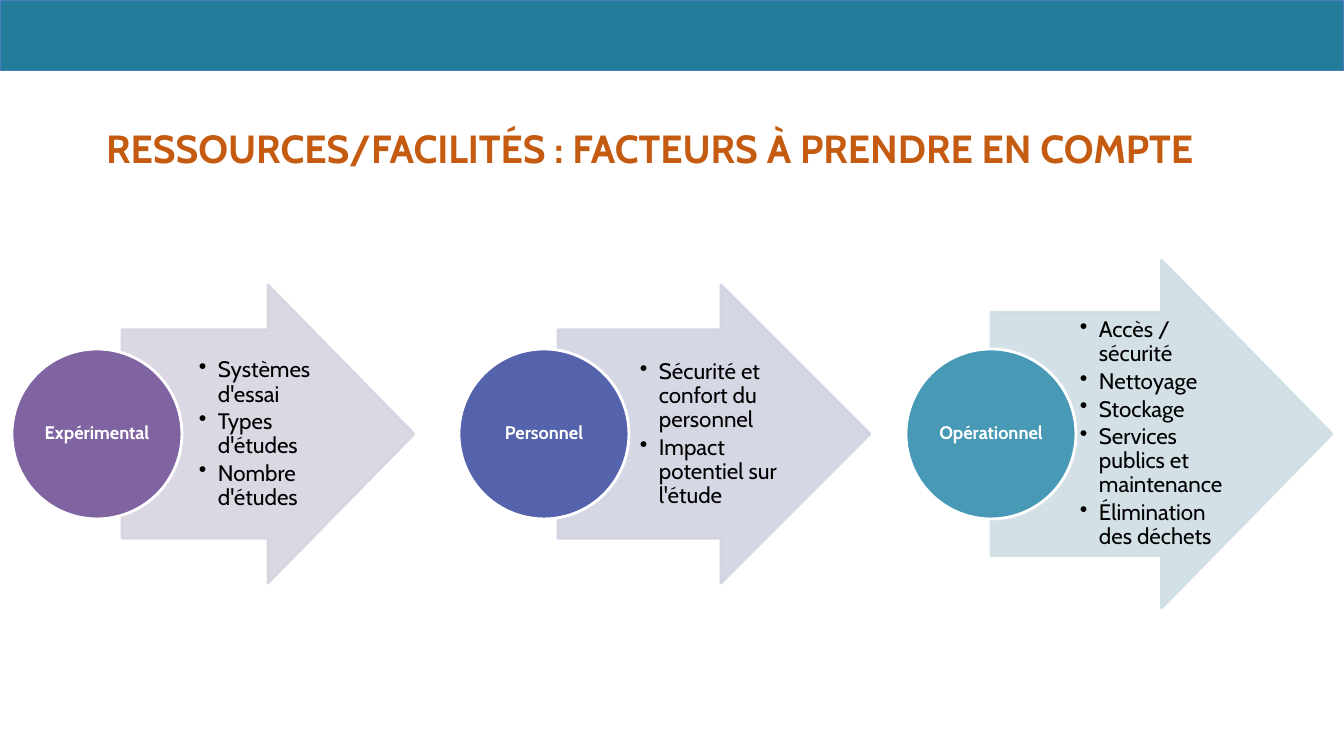
from lxml import etree
from pptx import Presentation
from pptx.dml.color import RGBColor
from pptx.enum.shapes import MSO_SHAPE
from pptx.enum.text import MSO_ANCHOR, PP_ALIGN
from pptx.oxml.ns import qn
from pptx.util import Emu, Pt

RECT, ARROW, OVAL = MSO_SHAPE.RECTANGLE, MSO_SHAPE.RIGHT_ARROW, MSO_SHAPE.OVAL
LEFT, CENTER = PP_ALIGN.LEFT, PP_ALIGN.CENTER
TOP, MIDDLE = MSO_ANCHOR.TOP, MSO_ANCHOR.MIDDLE

WHITE = RGBColor(0xFF, 0xFF, 0xFF)
BLACK = RGBColor(0x00, 0x00, 0x00)
ORANGE = RGBColor(0xC5, 0x5A, 0x11)
TEAL = RGBColor(0x23, 0x7C, 0x9A)
BAND_LINE = RGBColor(0x4B, 0x7E, 0xBC)
PURPLE, PALE_PURPLE = RGBColor(0x80, 0x64, 0xA2), RGBColor(0xD8, 0xD3, 0xE0)
INDIGO, PALE_INDIGO = RGBColor(0x55, 0x62, 0xAC), RGBColor(0xD1, 0xD3, 0xE2)
CYAN, PALE_CYAN = RGBColor(0x47, 0x99, 0xB5), RGBColor(0xCF, 0xDE, 0xE5)

FONT = "Cabin"
PX = 914400 / 100.8

prs = Presentation()
prs.slide_width, prs.slide_height = Emu(round(1344 * PX)), Emu(round(756 * PX))
s = prs.slides.add_slide(prs.slide_layouts[6])


def add_box(kind, x, y, w, h, fill=None, line=None, line_width=2, alpha=None):
    """Add a preset shape, or a text box when kind is None; lengths in px."""
    box = [Emu(round(v * PX)) for v in (x, y, w, h)]
    if kind is None:
        return s.shapes.add_textbox(*box)
    sp = s.shapes.add_shape(kind, *box)
    sp.shadow.inherit = False
    sp.fill.solid()
    sp.fill.fore_color.rgb = fill
    sp.line.color.rgb = line
    sp.line.width = Pt(line_width)
    if alpha:
        for color in sp._element.spPr.iter(qn("a:srgbClr")):
            etree.SubElement(color, qn("a:alpha"), val=str(alpha * 1000))
    return sp


def write(sp, lines, size, color, bold=False, align=CENTER, anchor=MIDDLE,
          insets=(1, 1, 1, 1), spacing=0.9, after=0, bullet=False):
    tf = sp.text_frame
    tf.word_wrap = True
    tf.vertical_anchor = anchor
    tf.margin_left, tf.margin_top, tf.margin_right, tf.margin_bottom = [
        Emu(round(v * PX)) for v in insets]
    for i, text in enumerate(lines):
        p = tf.paragraphs[0] if i == 0 else tf.add_paragraph()
        p.alignment = align
        p.line_spacing = spacing
        p.space_after = Pt(after)
        if bullet:
            pPr = p._p.get_or_add_pPr()
            indent = round(19 * PX)
            pPr.set("marL", str(indent))
            pPr.set("indent", str(-indent))
            etree.SubElement(pPr, qn("a:buChar"), char="•")
        r = p.add_run()
        r.text = text
        r.font.name, r.font.size, r.font.bold = FONT, Pt(size), bold
        r.font.color.rgb = color


# Top band and title
add_box(RECT, 0, 0, 1344, 71, TEAL, BAND_LINE, 0.75)
title = add_box(None, 17, 119, 1265, 116)
write(title, ["RESSOURCES/FACILITÉS : FACTEURS À PRENDRE EN COMPTE"], 28, ORANGE,
      bold=True, anchor=TOP, insets=(10, 5, 10, 0), spacing=1.0)

# Factors: label, circle colour, arrow colour, arrow left, width, height, items
FACTORS = [
    ("Expérimental", PURPLE, PALE_PURPLE, 122, 292, 298,
     ["Systèmes d'essai", "Types d'études", "Nombre d'études"]),
    ("Personnel", INDIGO, PALE_INDIGO, 558, 312, 298,
     ["Sécurité et confort du personnel", "Impact potentiel sur l'étude"]),
    ("Opérationnel", CYAN, PALE_CYAN, 991, 341, 348,
     ["Accès / sécurité", "Nettoyage", "Stockage",
      "Services publics et maintenance", "Élimination des déchets"]),
]
MID_Y, CIRCLE, CIRCLE_LEFT, STEP = 434, 170, 12, 447
SHAFT = 0.7

for i, (label, color, pale, x, w, h, items) in enumerate(FACTORS):
    # Arrow with its bullet list
    arrow = add_box(ARROW, x, MID_Y - h // 2, w, h, pale, pale, alpha=90)
    arrow.adjustments[0], arrow.adjustments[1] = SHAFT, 0.5
    shaft_h = round(SHAFT * h)
    bullets = add_box(None, x + w // 4, MID_Y - shaft_h // 2, w // 2 - 4, shaft_h)
    write(bullets, items, 16, BLACK, align=LEFT, insets=(4, 1, 2, 1),
          after=2.4, bullet=True)
    # Circle with the factor name
    circle = add_box(OVAL, CIRCLE_LEFT + i * STEP, MID_Y - CIRCLE // 2,
                     CIRCLE, CIRCLE, color, WHITE)
    write(circle, [label], 13, WHITE, bold=True)

prs.save("out.pptx")
